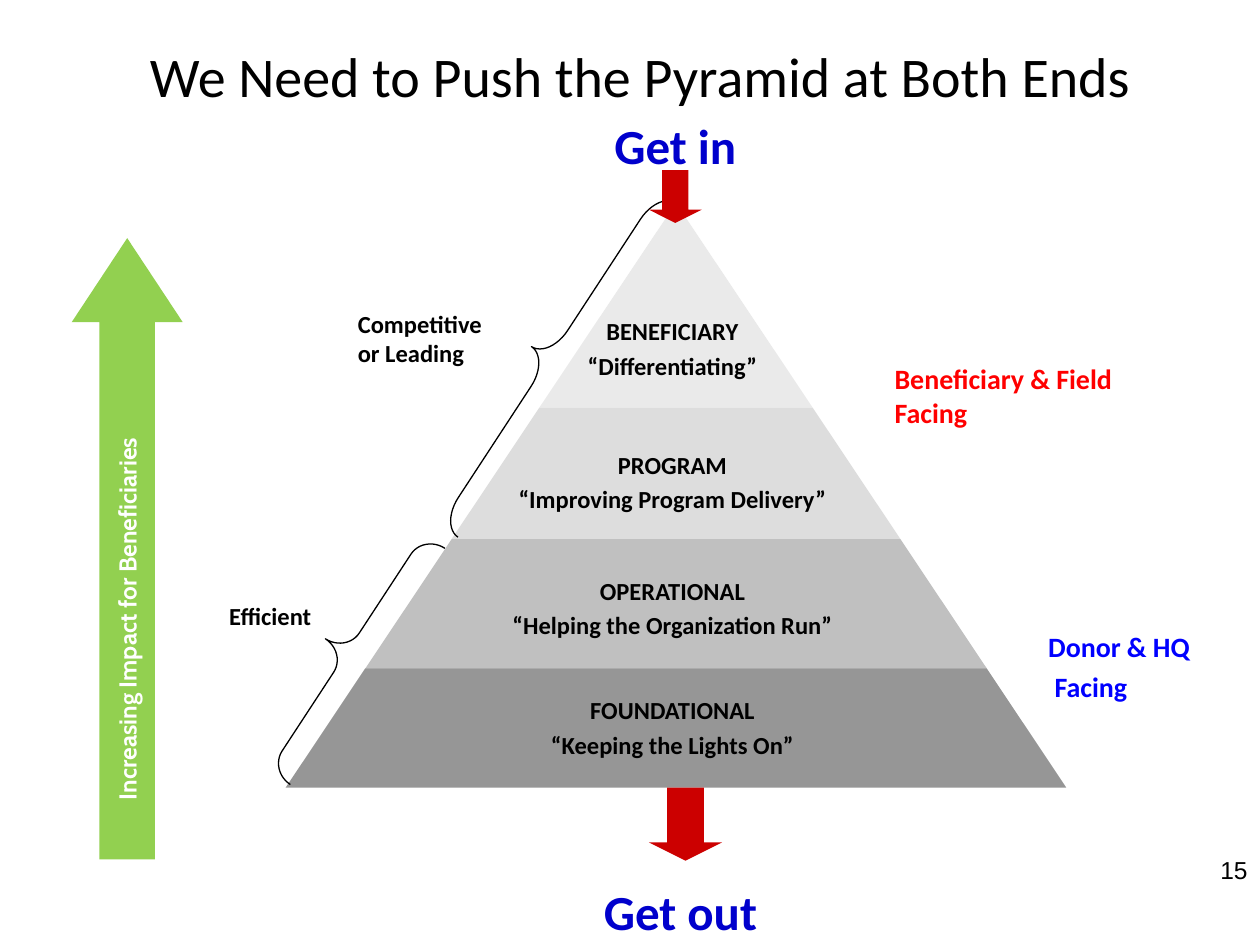
from pptx import Presentation
from pptx.dml.color import RGBColor
from pptx.enum.shapes import MSO_SHAPE
from pptx.enum.text import MSO_ANCHOR, PP_ALIGN
from pptx.util import Pt

COLORS = {
    "black": "000000", "white": "FFFFFF", "red": "FF0000", "blue": "0000FF",
    "navy": "0000CC", "arrow": "CC0000", "green": "92D050",
}
TITLE = "We Need to Push the Pyramid at Both Ends"

# Pyramid geometry, and its levels: bottom edge, fill, text top, lines
CENTER, APEX, BASE, HALF_BASE = 386.3, 116, 450, 223
LEVELS = [
    (233, "EAEAEA", 180.7, ["BENEFICIARY", "“Differentiating”"]),
    (308, "DDDDDD", 257, ["PROGRAM", "“Improving Program Delivery”"]),
    (382, "C0C0C0", 329, ["OPERATIONAL", "“Helping the Organization Run”"]),
    (450, "969696", 397.4, ["FOUNDATIONAL", "“Keeping the Lights On”"]),
]

# Braces: box, curve adjustment
BRACES = [((301.7, 90.7, 24.5, 228.2), 0.776), ((183.6, 292.3, 28.8, 161.3), 0.466)]

# Block arrows: shape, box, adjustments, color
ARROWS = [
    (MSO_SHAPE.DOWN_ARROW, (370.8, 97.2, 30.2, 30.2), (0.5, 0.25), "arrow"),
    (MSO_SHAPE.DOWN_ARROW, (370.8, 450, 41.8, 41.8), (0.5, 0.25), "arrow"),
    (MSO_SHAPE.UP_ARROW, (41, 136.1, 63.4, 355), (0.5, 0.757), "green"),
]

# Labels: lines, box, size, color, alignment
LEFT, MID = PP_ALIGN.LEFT, PP_ALIGN.CENTER
LABELS = [
    (["Efficient"], (131, 343.4, 54, 17.3), 14, "black", LEFT),
    (["Competitive \vor Leading"], (204.5, 176.4, 95.8, 33.8), 14, "black", LEFT),
    (["Donor & HQ", " Facing"], (599, 360, 107.3, 42.5), 16, "blue", LEFT),
    (["Beneficiary & Field Facing"], (511.2, 206.6, 137.5, 38.9), 16, "red", LEFT),
    (["Get in"], (329, 66.2, 113.8, 33.8), 28, "navy", MID),
    (["Get out"], (331.9, 504, 113.8, 33.8), 28, "navy", MID),
]
IMPACT = "Increasing Impact for Beneficiaries"


def rgb(name):
    return RGBColor.from_string(COLORS.get(name, name))


def pts(box):
    return [Pt(v) for v in box]


def format_text(tf, size, color, align, font="Calibri", bold=True):
    for i, p in enumerate(tf.paragraphs):
        p.alignment = align
        p.space_before = Pt(0.2 * size if i else 0)
        for r in p.runs:
            r.font.size, r.font.name, r.font.bold = Pt(size), font, bold
            r.font.color.rgb = rgb(color)


def add_text(lines, box, size, color, align, inset=0, **style):
    sp = slide.shapes.add_textbox(*pts(box))
    tf = sp.text_frame
    tf.word_wrap = True
    if inset == 0:
        tf.margin_left = tf.margin_right = tf.margin_top = tf.margin_bottom = 0
    tf.text = "\n".join(lines)
    format_text(tf, size, color, align, **style)
    return sp


def paint(sp, color):
    sp.shadow.inherit = False
    sp.fill.solid()
    sp.fill.fore_color.rgb = rgb(color)
    sp.line.fill.background()


prs = Presentation()
prs.slide_width, prs.slide_height = Pt(720), Pt(540)
slide = prs.slides.add_slide(prs.slide_layouts[5])

# Title and slide number
title = slide.shapes.title
title.left, title.top, title.width, title.height = pts((30, -6, 672, 72))
title.text_frame.text = TITLE
title.text_frame.vertical_anchor = MSO_ANCHOR.BOTTOM
format_text(title.text_frame, 32, "black", MID, bold=False)
add_text(["15"], (624.2, 485.3, 95.8, 37.4), 14, "black", PP_ALIGN.RIGHT,
         inset=None, font="Arial", bold=False)

# Pyramid levels
top = APEX
for bottom, fill, text_top, lines in LEVELS:
    upper, lower = (HALF_BASE * (y - APEX) / (BASE - APEX) for y in (top, bottom))
    corners = [(CENTER - lower, bottom), (CENTER + lower, bottom),
               (CENTER + upper, top), (CENTER - upper, top)]
    if top == APEX:
        corners.pop()
    points = [pts(c) for c in corners]
    builder = slide.shapes.build_freeform(*points[0])
    builder.add_line_segments(points[1:], close=True)
    paint(builder.convert_to_shape(), fill)
    add_text(lines, (CENTER - 110, text_top, 216, 37.4), 14, "black", MID)
    top = bottom

# Braces along the left edge
for box, curve in BRACES:
    sp = slide.shapes.add_shape(MSO_SHAPE.LEFT_BRACE, *pts(box))
    sp.adjustments[0], sp.adjustments[1] = curve, 0.5
    sp.rotation = 33.2
    sp.shadow.inherit = False
    sp.fill.background()
    sp.line.color.rgb = rgb("black")
    sp.line.width = Pt(0.75)

# Arrows
for shape, box, adjustments, color in ARROWS:
    sp = slide.shapes.add_shape(shape, *pts(box))
    for i, value in enumerate(adjustments):
        sp.adjustments[i] = value
    paint(sp, color)

# Labels
for label in LABELS:
    add_text(*label)
impact = add_text([IMPACT], (-50.4, 325.4, 246.2, 17.3), 14, "white", LEFT, font="Cabin")
impact.rotation = 270

prs.save("out.pptx")
